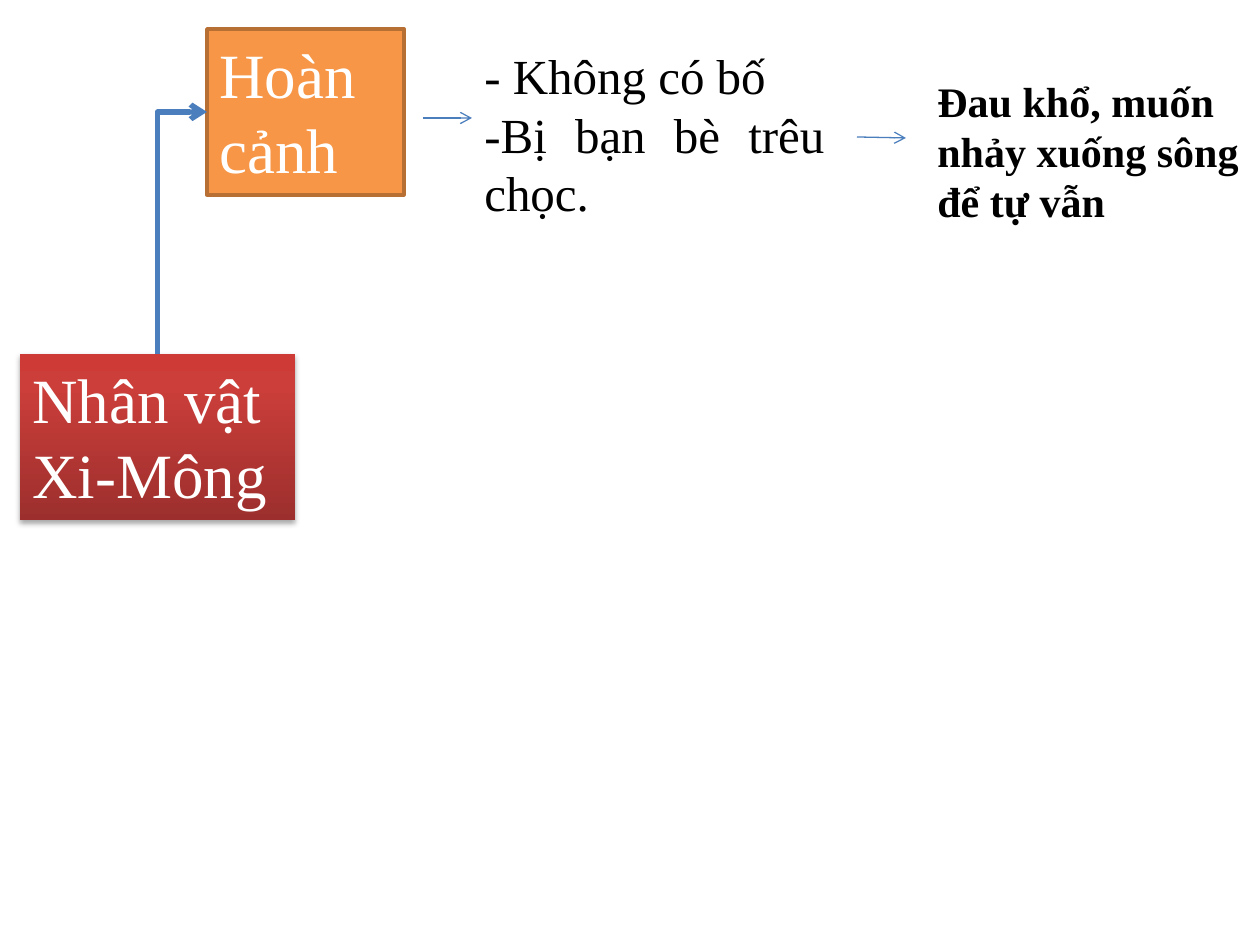
"""Build the character diagram slide for Xi-Mông."""
import copy

import lxml.etree
import pptx
import pptx.dml.color
import pptx.enum.dml
import pptx.enum.shapes
import pptx.enum.text
import pptx.oxml
import pptx.oxml.ns
import pptx.util

RGB = pptx.dml.color.RGBColor
ALIGN = pptx.enum.text.PP_ALIGN
CONNECTOR = pptx.enum.shapes.MSO_CONNECTOR
qn = pptx.oxml.ns.qn

WHITE = RGB(0xFF, 0xFF, 0xFF)
BLACK = RGB(0, 0, 0)
ORANGE = RGB(0xF7, 0x96, 0x46)
BROWN = RGB(0xB7, 0x6F, 0x34)
BLUE = RGB(0x4B, 0x7E, 0xBC)
REDS = [(0, RGB(0x9C, 0x2F, 0x2D)), (0.8, RGB(0xCB, 0x3E, 0x3A)), (1, RGB(0xCE, 0x3B, 0x37))]
SCALE = 914400 / 126

BOX_FONT = {"name": "Times New Roman", "size": pptx.util.Pt(36)}
NOTE_FONT = {"name": "Times New Roman", "size": pptx.util.Pt(28)}
RESULT_FONT = {"name": "Times New Roman", "size": pptx.util.Pt(24), "bold": True}

CHARACTER = ((20, 354, 275, 166), ["Nhân vật", "Xi-Mông"])
SITUATION = ((207, 29, 197, 166), ["Hoàn cảnh"])
NOTES = [
    ((472, 39, 365, 258), ["- Không có bố", "-Bị bạn bè trêu chọc."], NOTE_FONT, ALIGN.JUSTIFY),
    ((925, 69, 364, 166), ["Đau khổ, muốn nhảy xuống sông để tự vẫn"], RESULT_FONT, ALIGN.LEFT),
]
ARROWS = [(857, 137, 906, 138), (423, 118, 472, 118)]
SHADOW = (
    f'<a:effectLst {pptx.oxml.ns.nsdecls("a")}>'
    '<a:outerShdw blurRad="40000" dist="23000" dir="5400000" rotWithShape="0">'
    '<a:srgbClr val="000000"><a:alpha val="35000"/></a:srgbClr>'
    "</a:outerShdw></a:effectLst>"
)


def emu(values):
    return [pptx.util.Emu(round(v * SCALE)) for v in values]


def write(sp, lines, font, color, align):
    tf = sp.text_frame
    tf.word_wrap = True
    tf.auto_size = pptx.enum.text.MSO_AUTO_SIZE.SHAPE_TO_FIT_TEXT
    tf.vertical_anchor = pptx.enum.text.MSO_ANCHOR.TOP
    for i, line in enumerate(lines):
        p = tf.add_paragraph() if i else tf.paragraphs[0]
        p.alignment = align
        r = p.add_run()
        r.text = line
        for name, value in font.items():
            setattr(r.font, name, value)
        r.font.color.rgb = color


def add_box(shapes, at, lines):
    sp = shapes.add_shape(pptx.enum.shapes.MSO_SHAPE.RECTANGLE, *emu(at))
    sp.shadow.inherit = False
    write(sp, lines, BOX_FONT, WHITE, ALIGN.LEFT)
    return sp


def paint_gradient(sp, colors):
    sp.fill.gradient()
    sp.fill.gradient_angle = 90
    first = sp.fill.gradient_stops[0]._gs
    first.addnext(copy.deepcopy(first))
    for stop, (position, color) in zip(sp.fill.gradient_stops, colors):
        stop.position = position
        stop.color.rgb = color


def add_arrow(shapes, kind, ends, width):
    c = shapes.add_connector(kind, *ends)
    c.line.color.rgb = BLUE
    c.line.width = pptx.util.Pt(width)
    ln = c.line._get_or_add_ln()
    lxml.etree.SubElement(ln, qn("a:tailEnd"), type="arrow")
    lxml.etree.SubElement(c._element.spPr, qn("a:effectLst"))
    return c


def add_corner_arrow(shapes, start, end):
    x1, y1 = start.left + start.width // 2, start.top
    x2, y2 = end.left, end.top + end.height // 2
    c = add_arrow(shapes, CONNECTOR.ELBOW, (x1, y1, x2, y2), 3)
    c.begin_connect(start, 0)
    c.end_connect(end, 1)
    c.width, c.height = y1 - y2, x2 - x1
    c.left = (x1 + x2 - c.width) // 2
    c.top = (y1 + y2 - c.height) // 2
    spPr = c._element.spPr
    spPr.find(qn("a:prstGeom")).set("prst", "bentConnector2")
    for name, value in {"rot": "5400000", "flipH": "1", "flipV": "1"}.items():
        spPr.find(qn("a:xfrm")).set(name, value)


def main():
    prs = pptx.Presentation()
    prs.slide_width, prs.slide_height = emu((1260, 945))
    shapes = prs.slides.add_slide(prs.slide_layouts[6]).shapes

    character = add_box(shapes, *CHARACTER)
    paint_gradient(character, REDS)
    character.line.fill.background()
    spPr = character._element.spPr
    spPr.replace(spPr.find(qn("a:effectLst")), pptx.oxml.parse_xml(SHADOW))

    situation = add_box(shapes, *SITUATION)
    situation.fill.solid()
    situation.fill.fore_color.rgb = ORANGE
    situation.line.color.rgb = BROWN
    situation.line.width = pptx.util.Pt(2)

    add_corner_arrow(shapes, character, situation)
    for at, lines, font, align in NOTES:
        write(shapes.add_textbox(*emu(at)), lines, font, BLACK, align)
    for ends in ARROWS:
        add_arrow(shapes, CONNECTOR.STRAIGHT, emu(ends), 0.75)
    prs.save("out.pptx")


if __name__ == "__main__":
    main()
